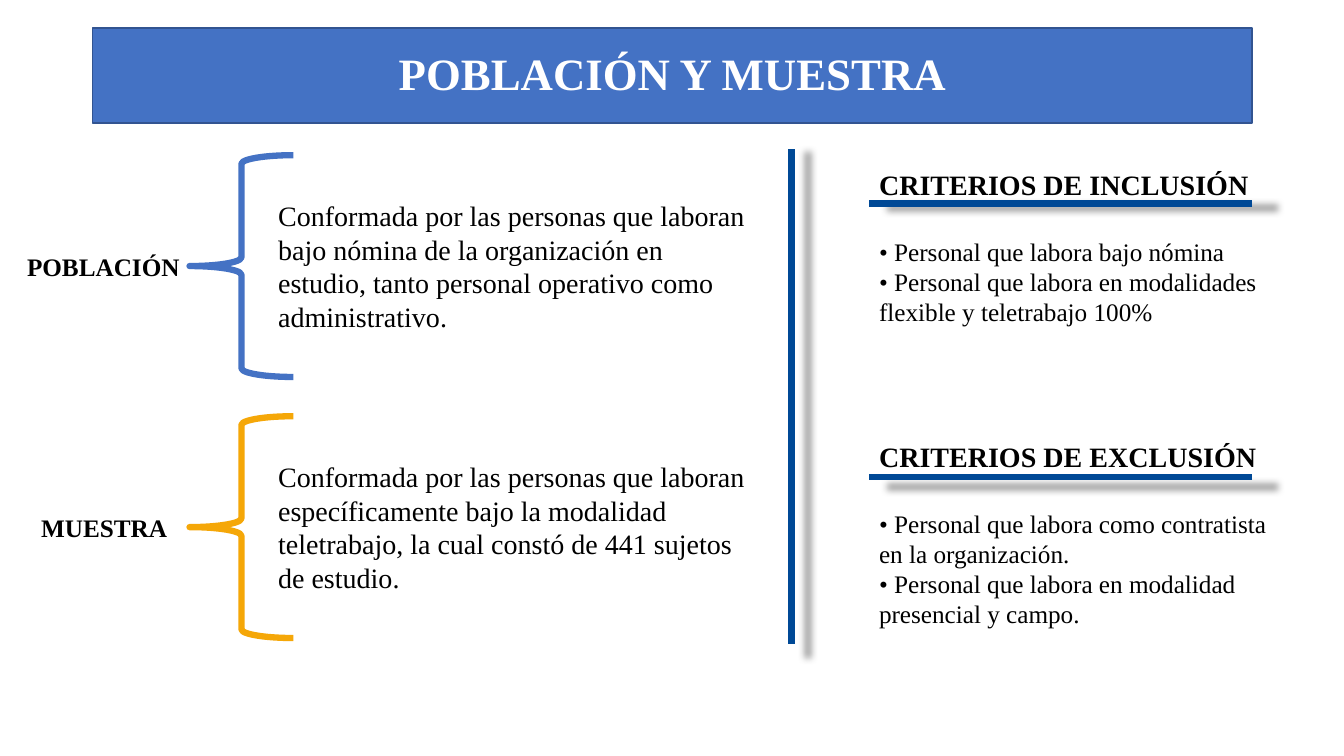
from lxml import etree
from pptx import Presentation
from pptx.dml.color import RGBColor
from pptx.enum.shapes import MSO_CONNECTOR, MSO_SHAPE
from pptx.enum.text import MSO_ANCHOR, MSO_AUTO_SIZE, PP_ALIGN
from pptx.oxml import parse_xml
from pptx.oxml.ns import qn
from pptx.util import Inches, Pt

RECTANGLE = MSO_SHAPE.RECTANGLE
LEFT_BRACE = MSO_SHAPE.LEFT_BRACE
STRAIGHT = MSO_CONNECTOR.STRAIGHT
MIDDLE = MSO_ANCHOR.MIDDLE
CENTER = PP_ALIGN.CENTER
FIT_TEXT = MSO_AUTO_SIZE.SHAPE_TO_FIT_TEXT

BLUE = RGBColor(0x44, 0x72, 0xC4)
BLUE_EDGE = RGBColor(0x32, 0x54, 0x91)
ORANGE = RGBColor(0xF5, 0xA7, 0x08)
NAVY = RGBColor(0x00, 0x49, 0x96)
BLACK = RGBColor(0x00, 0x00, 0x00)
WHITE = RGBColor(0xFF, 0xFF, 0xFF)

TITLE = {"name": "Times New Roman", "size": Pt(32), "bold": True}
LABEL = {"name": "Times New Roman", "size": Pt(18), "bold": True}
HEADING = {"name": "Times New Roman", "size": Pt(20), "bold": True}
BODY = {"name": "Times New Roman", "size": Pt(20), "bold": False}
CRITERION = {"name": "Times New Roman", "size": Pt(18), "bold": False}

CRITERIA_LEFT = 8.62
RULE_RIGHT = 12.42

SHADOW = """<a:effectLst xmlns:a="http://schemas.openxmlformats.org/drawingml/2006/main">
<a:outerShdw blurRad="63500" sx="102000" sy="102000" algn="ctr" rotWithShape="0">
<a:srgbClr val="000000"><a:alpha val="40000"/></a:srgbClr>
</a:outerShdw></a:effectLst>"""

GROUPS = [
    ("POBLACIÓN", 0.17, 1.84, 1.54, BLUE,
     "Conformada por las personas que laboran bajo nómina de la organización en "
     "estudio, tanto personal operativo como administrativo."),
    ("MUESTRA", 0.31, 1.57, 4.13, ORANGE,
     "Conformada por las personas que laboran específicamente bajo la modalidad "
     "teletrabajo, la cual constó de 441 sujetos de estudio."),
]

CRITERIA = [
    ("CRITERIOS DE INCLUSIÓN", 1.61, 2.02, 1.01,
     ["• Personal que labora bajo nómina",
      "• Personal que labora en modalidades flexible y teletrabajo 100%"]),
    ("CRITERIOS DE EXCLUSIÓN", 4.31, 4.73, 1.31,
     ["• Personal que labora como contratista en la organización.",
      "• Personal que labora en modalidad presencial y campo."]),
]


def write_paragraph(paragraph, text, style, color):
    run = paragraph.add_run()
    run.text = text
    for name, value in style.items():
        setattr(run.font, name, value)
    run.font.color.rgb = color


def add_text(slide, left, top, width, height, texts, style):
    shape = slide.shapes.add_textbox(Inches(left), Inches(top), Inches(width), Inches(height))
    frame = shape.text_frame
    frame.word_wrap = True
    frame.auto_size = FIT_TEXT
    for index, text in enumerate(texts):
        paragraph = frame.add_paragraph() if index else frame.paragraphs[0]
        write_paragraph(paragraph, text, style, BLACK)


def add_outlined_shape(slide, kind, left, top, width, height, color, weight):
    shape = slide.shapes.add_shape(
        kind, Inches(left), Inches(top), Inches(width), Inches(height))
    shape.shadow.inherit = False
    shape.line.color.rgb = color
    shape.line.width = Pt(weight)
    return shape


def add_banner(slide, text):
    banner = add_outlined_shape(slide, RECTANGLE, 0.92, 0.28, 11.5, 0.94, BLUE_EDGE, 1)
    banner.fill.solid()
    banner.fill.fore_color.rgb = BLUE
    banner.text_frame.vertical_anchor = MIDDLE
    paragraph = banner.text_frame.paragraphs[0]
    paragraph.alignment = CENTER
    paragraph.line_spacing = 0.9
    write_paragraph(paragraph, text, TITLE, WHITE)


def add_rule(slide, start_x, start_y, end_x, end_y):
    rule = slide.shapes.add_connector(
        STRAIGHT, Inches(start_x), Inches(start_y), Inches(end_x), Inches(end_y))
    rule.line.color.rgb = NAVY
    rule.line.width = Pt(4.5)
    properties = rule.element.find(qn("p:spPr"))
    properties.append(parse_xml(etree.tostring(etree.fromstring(SHADOW))))


def add_group(slide, label, label_left, label_width, top, color, description):
    brace = add_outlined_shape(slide, LEFT_BRACE, 1.88, top, 1.03, 2.2, color, 4.5)
    brace.fill.background()
    add_text(slide, label_left, top + 0.9, label_width, 0.4, [label], LABEL)
    add_text(slide, 2.66, top + 0.38, 4.85, 1.45, [description], BODY)


def add_criteria(slide, heading, top, rule_y, list_height, criteria):
    add_text(slide, CRITERIA_LEFT, top, 3.95, 0.44, [heading], HEADING)
    add_rule(slide, RULE_RIGHT, rule_y, CRITERIA_LEFT, rule_y)
    add_text(slide, CRITERIA_LEFT, top + 0.68, 4.15, list_height, criteria, CRITERION)


def main():
    presentation = Presentation()
    presentation.slide_width = Inches(13.33)
    presentation.slide_height = Inches(7.5)
    slide = presentation.slides.add_slide(presentation.slide_layouts[6])
    add_banner(slide, "POBLACIÓN Y MUESTRA")
    for group in GROUPS:
        add_group(slide, *group)
    for block in CRITERIA:
        add_criteria(slide, *block)
    add_rule(slide, 7.85, 1.48, 7.85, 6.39)
    presentation.save("out.pptx")


if __name__ == "__main__":
    main()
